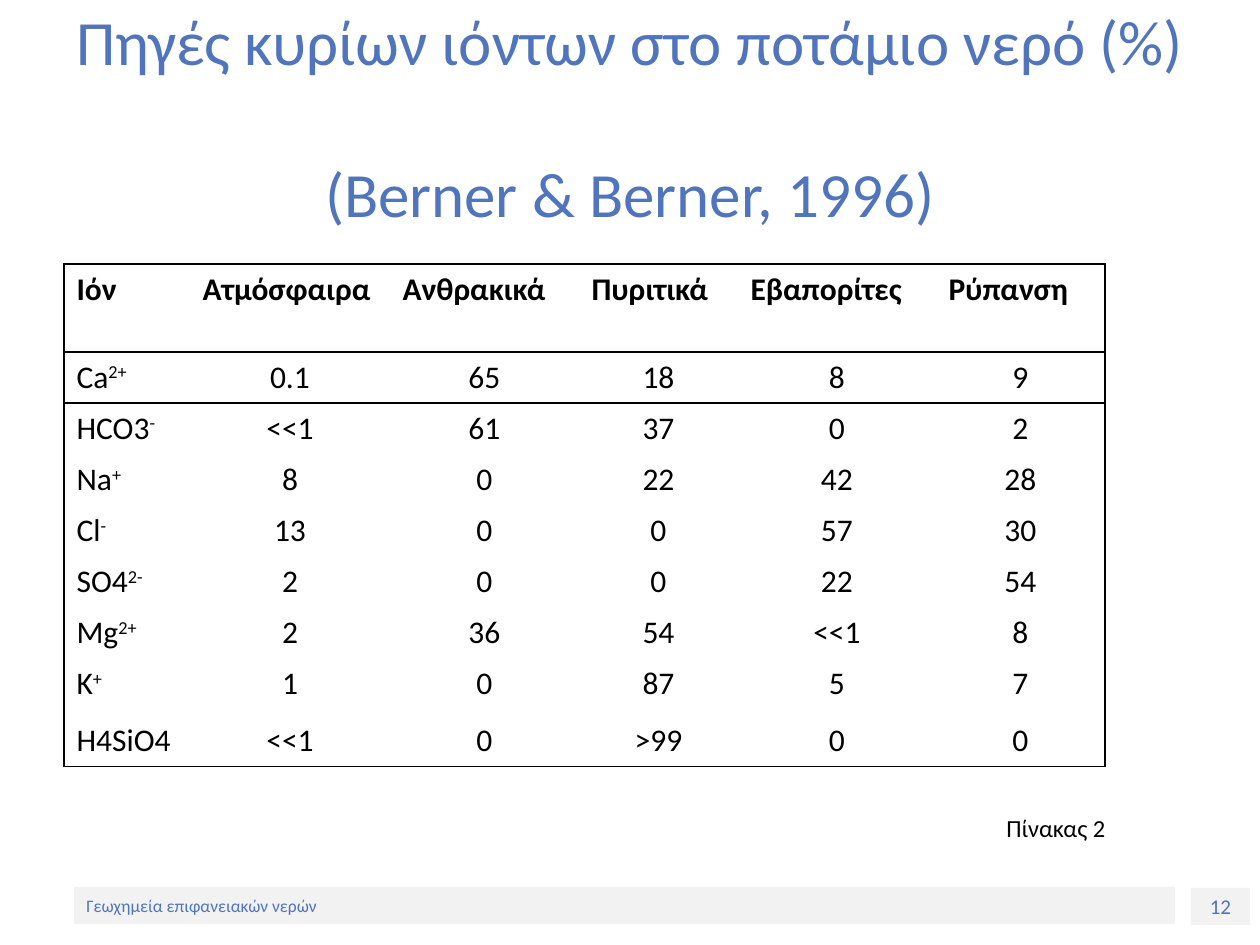
from lxml.etree import SubElement as Sub
from pptx import Presentation
from pptx.dml.color import RGBColor
from pptx.enum.shapes import MSO_SHAPE as Shape
from pptx.enum.text import MSO_ANCHOR as Anchor, MSO_AUTO_SIZE as Auto, PP_ALIGN as Align
from pptx.oxml.ns import qn
from pptx.util import Pt

BLUE, BLACK, GREY, WHITE = "5075BC", "000000", "F2F2F2", "FFFFFF"
TITLE = ["Πηγές κυρίων ιόντων στο ποτάμιο νερό (%)", "(Berner & Berner, 1996)"]
HEADS = ["Ιόν", "Ατμόσφαιρα", "Ανθρακικά", "Πυριτικά", "Εβαπορίτες", "Ρύπανση"]
IONS = [
    ("Ca", "2+", ["0.1", "65", "18", "8", "9"]),
    ("HCO3", "-", ["<<1", "61", "37", "0", "2"]),
    ("Na", "+", ["8", "0", "22", "42", "28"]),
    ("Cl", "-", ["13", "0", "0", "57", "30"]),
    ("SO4", "2-", ["2", "0", "0", "22", "54"]),
    ("Mg", "2+", ["2", "36", "54", "<<1", "8"]),
    ("K", "+", ["1", "0", "87", "5", "7"]),
    ("H4SiO4", "", ["<<1", "0", ">99", "0", "0"]),
]
WIDTHS = [126, 200, 189, 159, 198, 169]
HEIGHTS = [88] + [51] * 6 + [57, 51]
RULES = {0, 1, 2, len(HEIGHTS)}
SIDES = {0, len(WIDTHS)}
BOXES = [
    ("12", (1191, 888, 59, 37), GREY, BLUE, 12, Align.CENTER),
    ("Γεωχημεία επιφανειακών νερών", (74, 887, 1101, 37), GREY, BLUE, 10, Align.LEFT),
    ("Πίνακας 2", (994, 805, 149, 45), WHITE, BLACK, 14, Align.LEFT),
]


def px(n):
    return round(n * 914400 / 126)


def rgb(code):
    return RGBColor.from_string(code)


def style(par, size, color, align=Align.LEFT, bold=False):
    par.alignment = align
    font = par.font
    font.name, font.size, font.bold = "Calibri", Pt(size), bold
    font.color.rgb = rgb(color)


def border(cell, row, col):
    props = cell._tc.get_or_add_tcPr()
    edges = {"a:lnL": col in SIDES, "a:lnR": col + 1 in SIDES,
             "a:lnT": row in RULES, "a:lnB": row + 1 in RULES}
    for tag, shown in edges.items():
        line = Sub(props, qn(tag), w=str(Pt(1)))
        if shown:
            Sub(Sub(line, qn("a:solidFill")), qn("a:srgbClr"), val=BLACK)
        else:
            Sub(line, qn("a:noFill"))
    cell.fill.background()


def add_title(slide):
    title = slide.shapes.title
    title.left, title.top, title.width, title.height = map(px, (63, 38, 1134, 157))
    frame = title.text_frame
    frame.auto_size, frame.word_wrap = Auto.NONE, True
    frame.vertical_anchor = Anchor.MIDDLE
    frame.margin_left = frame.margin_right = 0
    frame.text = "\n".join(TITLE)
    for par in frame.paragraphs:
        style(par, 36, BLUE, Align.CENTER)
    frame.paragraphs[1].space_before = Pt(44)


def add_grid(slide):
    area = map(px, (64, 264, sum(WIDTHS), sum(HEIGHTS)))
    grid = slide.shapes.add_table(len(HEIGHTS), len(WIDTHS), *area).table
    grid.first_row = grid.horz_banding = False
    for col, width in zip(grid.columns, WIDTHS):
        col.width = px(width)
    for row, height in zip(grid.rows, HEIGHTS):
        row.height = px(height)
    rows = [HEADS] + [[ion] + vals for ion, _, vals in IONS]
    for r, texts in enumerate(rows):
        for c, text in enumerate(texts):
            cell = grid.cell(r, c)
            border(cell, r, c)
            par = cell.text_frame.paragraphs[0]
            style(par, 18, BLACK, Align.CENTER if r and c else Align.LEFT, r == 0)
            par.add_run().text = text
    for r, (_, charge, _) in enumerate(IONS, 1):
        if charge:
            run = grid.cell(r, 0).text_frame.paragraphs[0].add_run()
            run.text = charge
            run._r.get_or_add_rPr().set("baseline", "30000")


def add_box(slide, text, area, fill, color, size, align):
    box = slide.shapes.add_shape(Shape.RECTANGLE, *map(px, area))
    box.shadow.inherit = False
    box.fill.solid()
    box.fill.fore_color.rgb = rgb(fill)
    box.line.fill.background()
    frame = box.text_frame
    frame.word_wrap, frame.vertical_anchor = True, Anchor.MIDDLE
    frame.text = text
    style(frame.paragraphs[0], size, color, align)


def main():
    deck = Presentation()
    deck.slide_width, deck.slide_height = px(1260), px(945)
    slide = deck.slides.add_slide(deck.slide_layouts[5])
    add_title(slide)
    add_grid(slide)
    for box in BOXES:
        add_box(slide, *box)
    deck.save("out.pptx")


if __name__ == "__main__":
    main()
